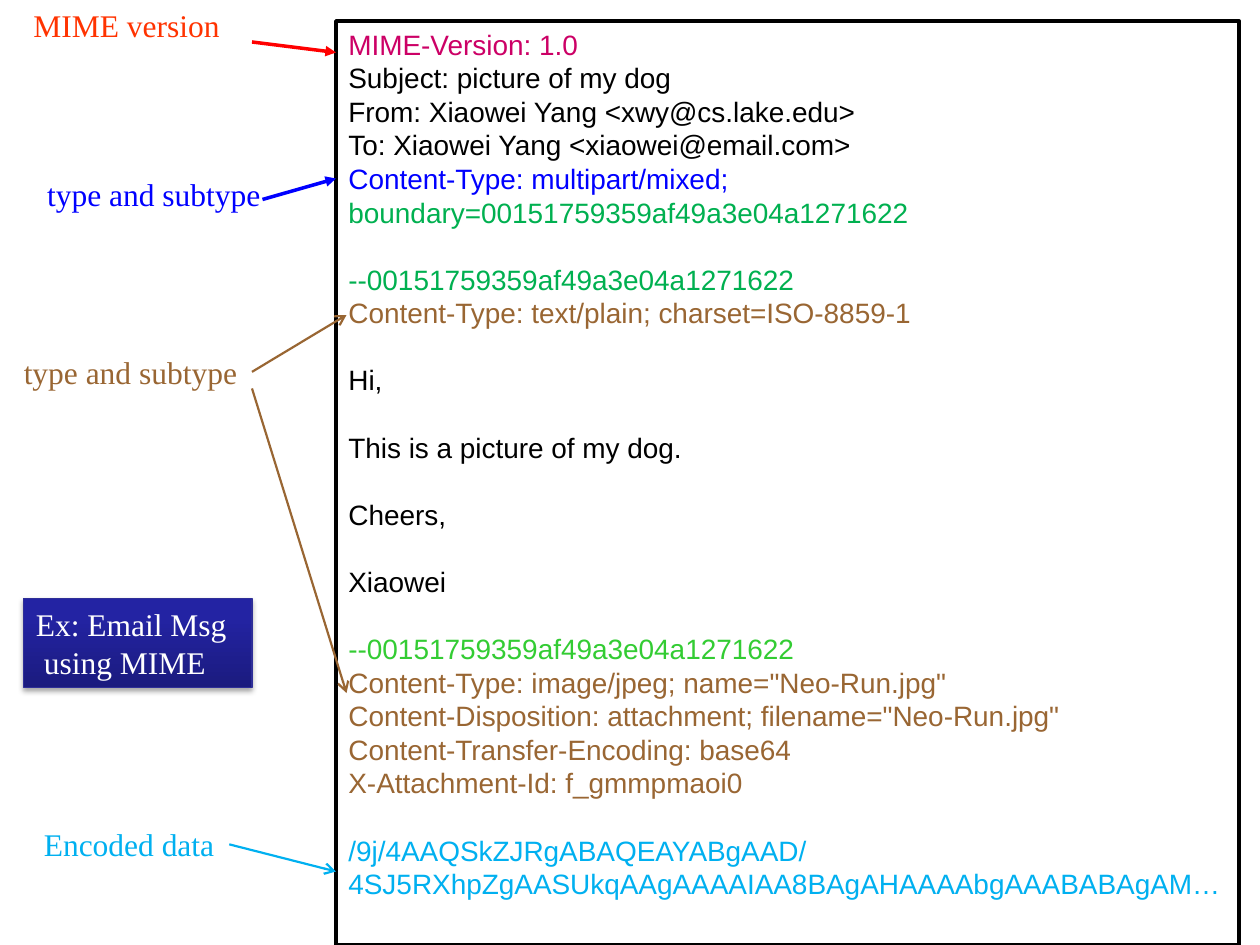
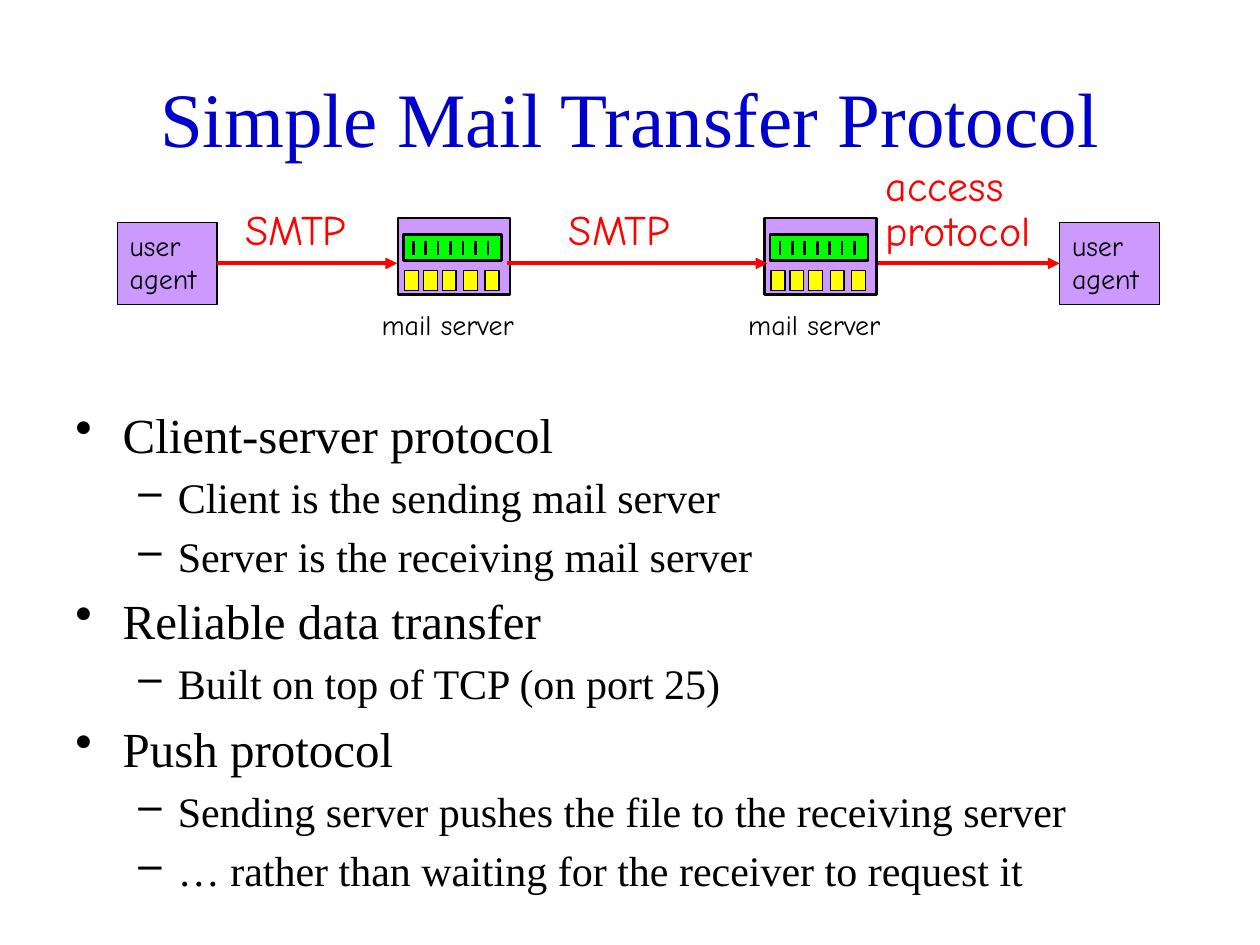
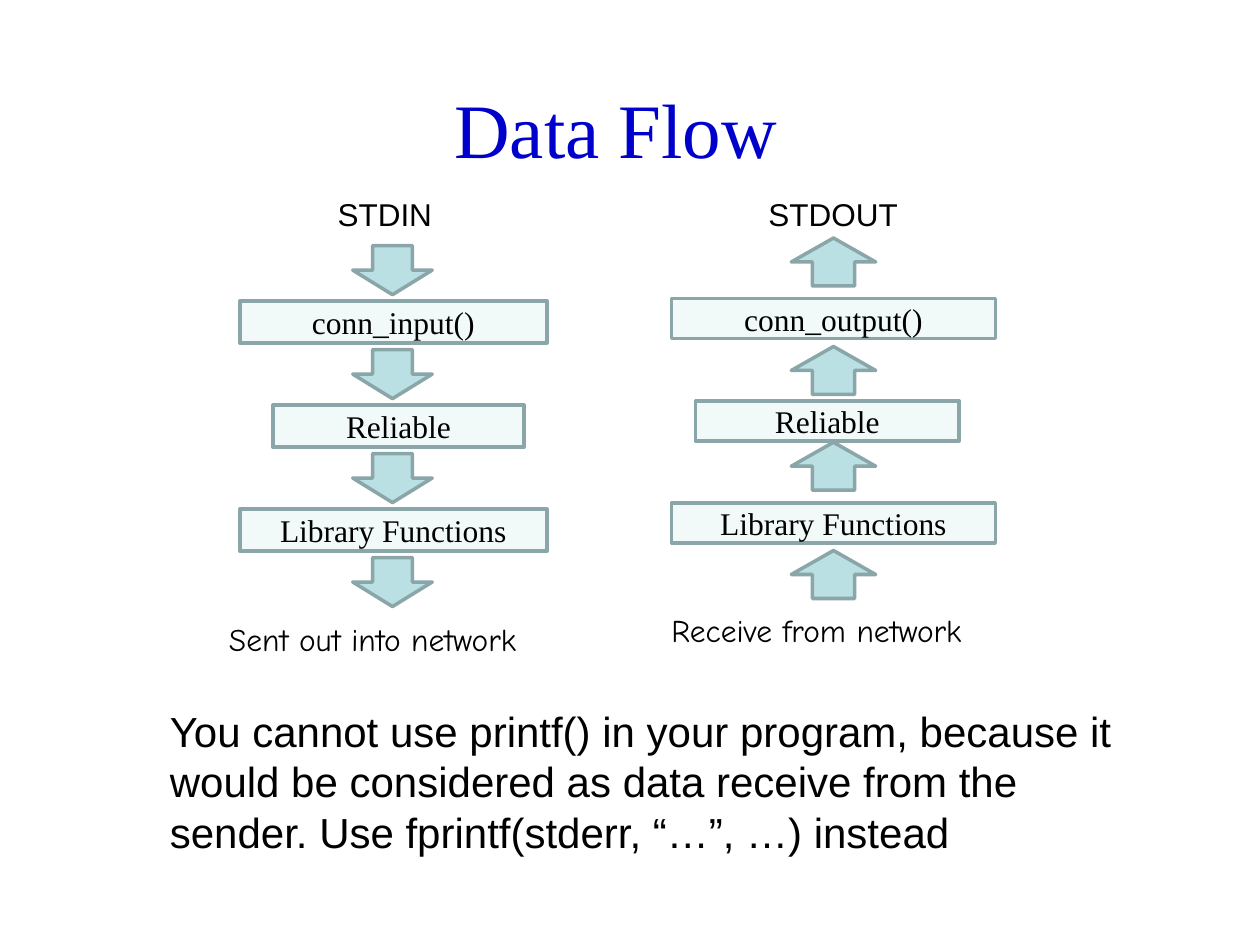
from typing import Any, NamedTuple

from pptx import Presentation
from pptx.dml.color import RGBColor
from pptx.enum import shapes, text
from pptx.oxml import xmlchemy
from pptx.util import Pt

BLACK = RGBColor(0x00, 0x00, 0x00)
WHITE = RGBColor(0xFF, 0xFF, 0xFF)
RED = RGBColor(0xFF, 0x00, 0x00)
BLUE = RGBColor(0x00, 0x00, 0xFF)
TITLE_BLUE = RGBColor(0x00, 0x00, 0xCC)
MAGENTA = RGBColor(0xCC, 0x00, 0x66)
ORANGE = RGBColor(0xFF, 0x33, 0x00)
BROWN = RGBColor(0x99, 0x66, 0x33)
SKY = RGBColor(0x00, 0xB0, 0xF0)
GREEN = RGBColor(0x00, 0xB0, 0x50)
LIME = RGBColor(0x33, 0xCC, 0x33)
NEON = RGBColor(0x00, 0xFF, 0x00)
YELLOW = RGBColor(0xFF, 0xFF, 0x00)
PURPLE = RGBColor(0xCC, 0x99, 0xFF)
NAVY = RGBColor(0x1B, 0x1B, 0x7E)
INDIGO = RGBColor(0x23, 0x23, 0xA3)
NAVY_EDGE = RGBColor(0x2F, 0x2F, 0x98)
PALE = RGBColor(0xF1, 0xF9, 0xF9)
TEAL = RGBColor(0xBB, 0xE0, 0xE3)
TEAL_EDGE = RGBColor(0x8A, 0xA6, 0xA8)

SERIF, SANS, COMIC = "Times New Roman", "Arial", "Comic Neue"
LEFT, CENTER, RIGHT = text.PP_ALIGN.LEFT, text.PP_ALIGN.CENTER, text.PP_ALIGN.RIGHT
TOP, MIDDLE = text.MSO_ANCHOR.TOP, text.MSO_ANCHOR.MIDDLE
RECT = shapes.MSO_SHAPE.RECTANGLE
LEFT_SIDE, RIGHT_SIDE = 1, 3


class Box(NamedTuple):
    left: float
    top: float
    width: float
    height: float

    def lengths(self) -> list:
        return [Pt(value) for value in self]


class Style(NamedTuple):
    size: float
    face: str
    color: RGBColor
    align: Any = LEFT
    anchor: Any = TOP
    spacing: float = 1.0


class Label(NamedTuple):
    box: Box
    lines: tuple
    style: Style
    wrap: bool = False


class Arrow(NamedTuple):
    start: tuple
    end: tuple
    color: RGBColor
    weight: float
    head: str = ""
    begin_shape: Any = None
    end_shape: Any = None


class Flow(NamedTuple):
    arrow_kind: Any
    arrow_left: float
    arrow_tops: list
    arrow_size: tuple
    steps: list
    labels: list


TITLE = Style(44, SERIF, TITLE_BLUE, CENTER, MIDDLE)
STEP = Style(18, SERIF, BLACK, CENTER, MIDDLE)
COMIC_SMALL = Style(16, COMIC, BLACK)
COMIC_LARGE = Style(24, COMIC, RED)


def set_all(target: Any, formats: dict) -> None:
    for name, value in formats.items():
        setattr(target, name, value)


def add_xml(parent: Any, tag: str, **attributes: Any) -> Any:
    child = xmlchemy.OxmlElement(tag)
    for name, value in attributes.items():
        child.set(name, str(value))
    parent.append(child)
    return child


def add_run(paragraph: Any, words: str, style: Style) -> None:
    run = paragraph.add_run()
    set_all(run, {"text": words})
    set_all(run.font, {"size": Pt(style.size), "name": style.face})
    run.font.color.rgb = style.color


def next_paragraph(frame: Any, first: bool) -> Any:
    return frame.paragraphs[0] if first else frame.add_paragraph()


def write(shape: Any, lines: tuple, style: Style, wrap: bool = True) -> None:
    frame = shape.text_frame
    set_all(frame, {"word_wrap": wrap, "vertical_anchor": style.anchor})
    for index, line in enumerate(lines):
        paragraph = next_paragraph(frame, index == 0)
        set_all(paragraph, {"alignment": style.align, "line_spacing": style.spacing})
        add_run(paragraph, line, style)


def add_label(slide: Any, label: Label) -> Any:
    shape = slide.shapes.add_textbox(*label.box.lengths())
    write(shape, label.lines, label.style, label.wrap)
    shape.text_frame.auto_size = text.MSO_AUTO_SIZE.SHAPE_TO_FIT_TEXT
    return shape


def add_title(slide: Any, box: Box, words: str) -> None:
    write(slide.shapes.add_textbox(*box.lengths()), (words,), TITLE)


def add_block(slide: Any, box: Box, fill: RGBColor, edge: RGBColor,
              weight: float, kind: Any = RECT) -> Any:
    shape = slide.shapes.add_shape(kind, *box.lengths())
    shape.shadow.inherit = False
    shape.fill.solid()
    shape.fill.fore_color.rgb = fill
    shape.line.color.rgb = edge
    shape.line.width = Pt(weight)
    return shape


def add_arrow(slide: Any, arrow: Arrow) -> None:
    ends = [Pt(value) for value in arrow.start + arrow.end]
    line = slide.shapes.add_connector(shapes.MSO_CONNECTOR.STRAIGHT, *ends)
    line.line.color.rgb = arrow.color
    line.line.width = Pt(arrow.weight)
    if arrow.head:
        add_xml(line.line._get_or_add_ln(), "a:tailEnd", type=arrow.head)
    add_xml(line._element.spPr, "a:effectLst")
    if arrow.begin_shape is not None:
        line.begin_connect(arrow.begin_shape, RIGHT_SIDE)
    if arrow.end_shape is not None:
        line.end_connect(arrow.end_shape, LEFT_SIDE)


# Slide 1: MIME message; each entry is (gap above, ((words, colour), ...))
BOUNDARY = "00151759359af49a3e04a1271622"
MESSAGE = [
    (False, (("MIME-Version: 1.0", MAGENTA),)),
    (False, (("Subject: picture of my dog", BLACK),)),
    (False, (("From: Xiaowei Yang <xwy@cs.lake.edu>", BLACK),)),
    (False, (("To: Xiaowei Yang <xiaowei@email.com>", BLACK),)),
    (False, (("Content-Type: multipart/mixed; ", BLUE),
             (f"boundary={BOUNDARY}", GREEN))),
    (True, ((f"--{BOUNDARY}", GREEN),)),
    (False, (("Content-Type: text/plain; charset=ISO-8859-1", BROWN),)),
    (True, (("Hi,", BLACK),)),
    (True, (("This is a picture of my dog.", BLACK),)),
    (True, (("Cheers,", BLACK),)),
    (True, (("Xiaowei", BLACK),)),
    (True, ((f"--{BOUNDARY}", LIME),)),
    (False, (('Content-Type: image/jpeg; name="Neo-Run.jpg"', BROWN),)),
    (False, (('Content-Disposition: attachment; filename="Neo-Run.jpg"', BROWN),)),
    (False, (("Content-Transfer-Encoding: base64", BROWN),)),
    (False, (("X-Attachment-Id: f_gmmpmaoi0", BROWN),)),
    (True, (("/9j/4AAQSkZJRgABAQEAYABgAAD/4SJ5RXhpZgAASUkqAAgAAAAIAA8BAgAHAAAAbgAAABABAgAM…",
             SKY),)),
]
LINE_GAP = 19.2


def build_mime(slide: Any) -> None:
    message = add_block(slide, Box(192, 12, 516, 528), WHITE, BLACK, 2)
    frame = message.text_frame
    set_all(frame, {"word_wrap": True, "vertical_anchor": TOP})
    for index, (gap, runs) in enumerate(MESSAGE):
        paragraph = next_paragraph(frame, index == 0)
        set_all(paragraph, {"alignment": LEFT, "space_before": Pt(LINE_GAP * gap)})
        for words, color in runs:
            add_run(paragraph, words, Style(16, SANS, color))

    # Annotations and their arrows
    kind = ("type and subtype",)
    add_label(slide, Label(Box(12, 0, 146, 36), ("MIME version",),
                           Style(18, SERIF, ORANGE), True))
    add_label(slide, Label(Box(-18, 96.5, 174, 36), kind,
                           Style(18, SERIF, BLUE, RIGHT), True))
    part_type = add_label(slide, Label(Box(6.5, 198, 137.5, 29), kind,
                                       Style(18, SERIF, BROWN)))
    encoded = add_label(slide, Label(Box(18, 468, 113, 29), ("Encoded data",),
                                     Style(18, SERIF, SKY)))
    for arrow in (
        Arrow((144, 24), (192, 30), RED, 2, "triangle"),
        Arrow((150, 114), (192, 102), BLUE, 2, "triangle"),
        Arrow((144, 212.5), (198, 180), BROWN, 1.25, "arrow", part_type),
        Arrow((144, 222), (198, 396), BROWN, 1.25, "arrow"),
        Arrow((131, 482.5), (192, 498), SKY, 1.25, "arrow", encoded),
    ):
        add_arrow(slide, arrow)

    # Caption with gradient and soft shadow
    caption = add_block(slide, Box(13.5, 342, 130.5, 51), NAVY, NAVY_EDGE, 0.75)
    caption.fill.gradient()
    caption.fill.gradient_angle = 90
    for stop, color, position in zip(caption.fill.gradient_stops, (NAVY, INDIGO), (0, 0.8)):
        stop.color.rgb = color
        stop.position = position
    effects = caption._element.spPr.find(
        "{http://schemas.openxmlformats.org/drawingml/2006/main}effectLst")
    shadow = add_xml(effects, "a:outerShdw", blurRad=Pt(3.1), dist=Pt(1.8),
                     dir=5400000, rotWithShape=0)
    add_xml(add_xml(shadow, "a:srgbClr", val=BLACK), "a:alpha", val=35000)
    write(caption, ("Ex: Email Msg", " using MIME"), Style(18, SERIF, WHITE), False)


# Slide 2: mail path and protocol facts
FACTS = [
    (0, "Client-server protocol"),
    (1, "Client is the sending mail server"),
    (1, "Server is the receiving mail server"),
    (0, "Reliable data transfer"),
    (1, "Built on top of TCP (on port 25)"),
    (0, "Push protocol"),
    (1, "Sending server pushes the file to the receiving server"),
    (1, "… rather than waiting for the receiver to request it"),
]
# Per level: size, left margin, hanging indent, bullet
LEVELS = [(28, 27, -27, "•"), (24, 58.5, -22.5, "–")]
MAILBOX_OFFSETS = (3.6, 14.4, 25.2, 37.4, 49.7)
PATH_Y = 150.5


def add_agent(slide: Any, left: float) -> Any:
    agent = add_block(slide, Box(left, PATH_Y - 23.5, 57, 47), PURPLE, BLACK, 0.75)
    write(agent, ("user", "agent"), COMIC_SMALL, False)
    return agent


def add_server(slide: Any, left: float) -> None:
    add_label(slide, Label(Box(left - 16.5, 172, 97, 26.5), ("mail server",), COMIC_SMALL))
    add_block(slide, Box(left, 124.5, 64, 44), PURPLE, BLACK, 1.5)
    add_block(slide, Box(left + 3, 134, 56, 15), NEON, BLACK, 1.5)
    for index in range(7):
        x = left + 8.7 + 7.1 * index
        add_arrow(slide, Arrow((x, 137.5), (x, 146), BLACK, 1.5))
    for offset in MAILBOX_OFFSETS:
        add_block(slide, Box(left + offset, 154.5, 8, 11.5), YELLOW, BLACK, 0.75)


def build_smtp(slide: Any) -> None:
    add_title(slide, Box(36, 21.6, 648, 90), "Simple Mail Transfer Protocol")

    facts = slide.shapes.add_textbox(*Box(36, 227.5, 666, 300).lengths()).text_frame
    facts.word_wrap = True
    for index, (level, fact) in enumerate(FACTS):
        size, margin, indent, bullet = LEVELS[level]
        paragraph = next_paragraph(facts, index == 0)
        set_all(paragraph, {"level": level, "space_before": Pt(0.2 * size)})
        add_run(paragraph, fact, Style(size, SERIF, BLACK))
        properties = paragraph._p.get_or_add_pPr()
        properties.set("marL", str(Pt(margin)))
        properties.set("indent", str(Pt(indent)))
        add_xml(properties, "a:buChar", char=bullet)

    # Mail path
    sender, receiver = add_agent(slide, 67), add_agent(slide, 605.5)
    for left in (227.5, 437):
        add_server(slide, left)
    for start, end, begin_shape, end_shape in (
        (124, 227, sender, None), (290, 438.5, None, None), (502, 605.5, None, receiver),
    ):
        add_arrow(slide, Arrow((start, PATH_Y), (end, PATH_Y), RED, 2.25, "triangle",
                               begin_shape, end_shape))
    for left in (133, 318):
        add_label(slide, Label(Box(left, 113, 81.5, 36), ("SMTP",), COMIC_LARGE))
    add_label(slide, Label(Box(499, 90.7, 107, 59), ("access", "protocol"),
                           COMIC_LARGE._replace(spacing=0.9)))


# Slide 3: data flow
STD = Style(18, SANS, BLACK)
NETWORK = Style(18, COMIC, BLACK)
FLOWS = [
    Flow(shapes.MSO_SHAPE.DOWN_ARROW, 201.6,
         [140.4 + 59.4 * row for row in range(4)], (45.4, 28),
         [(Box(137, 172, 175.5, 24), "conn_input()"),
          (Box(156, 231.5, 143.5, 24), "Reliable"),
          (Box(137, 291, 175.5, 24), "Library Functions")],
         [Label(Box(185.8, 108, 71, 21), ("STDIN",), STD, True),
          Label(Box(123.8, 350.6, 208, 29), ("Sent out into network",), NETWORK, True)]),
    Flow(shapes.MSO_SHAPE.UP_ARROW, 452.2, [136, 198, 252.7, 314.6], (48.2, 27.4),
         [(Box(383.8, 170.6, 185, 23), "conn_output()"),
          (Box(397.5, 229, 150.5, 23), "Reliable"),
          (Box(383.8, 287.3, 185, 23), "Library Functions")],
         [Label(Box(432, 108, 96, 20), ("STDOUT",), STD, True),
          Label(Box(376.6, 345.6, 219.6, 29), ("Receive from network",), NETWORK, True)]),
]


def build_flow(slide: Any) -> None:
    add_title(slide, Box(28, 28, 648, 90), "Data Flow")
    for flow in FLOWS:
        for top in flow.arrow_tops:
            add_block(slide, Box(flow.arrow_left, top, *flow.arrow_size),
                      TEAL, TEAL_EDGE, 2, flow.arrow_kind)
        for box, step in flow.steps:
            write(add_block(slide, box, PALE, TEAL_EDGE, 2), (step,), STEP)
        for label in flow.labels:
            add_label(slide, label)
    advice = ("You cannot use printf() in your program, because it would be considered "
              "as data receive from the sender. Use fprintf(stderr, “…”, …) instead")
    add_label(slide, Label(Box(90, 399.6, 556.6, 94.4), (advice,),
                           Style(24, SANS, BLACK), True))


def main() -> None:
    deck = Presentation()
    set_all(deck, {"slide_width": Pt(720), "slide_height": Pt(540)})
    for build in (build_mime, build_smtp, build_flow):
        build(deck.slides.add_slide(deck.slide_layouts[6]))
    deck.save("out.pptx")


if __name__ == "__main__":
    main()
